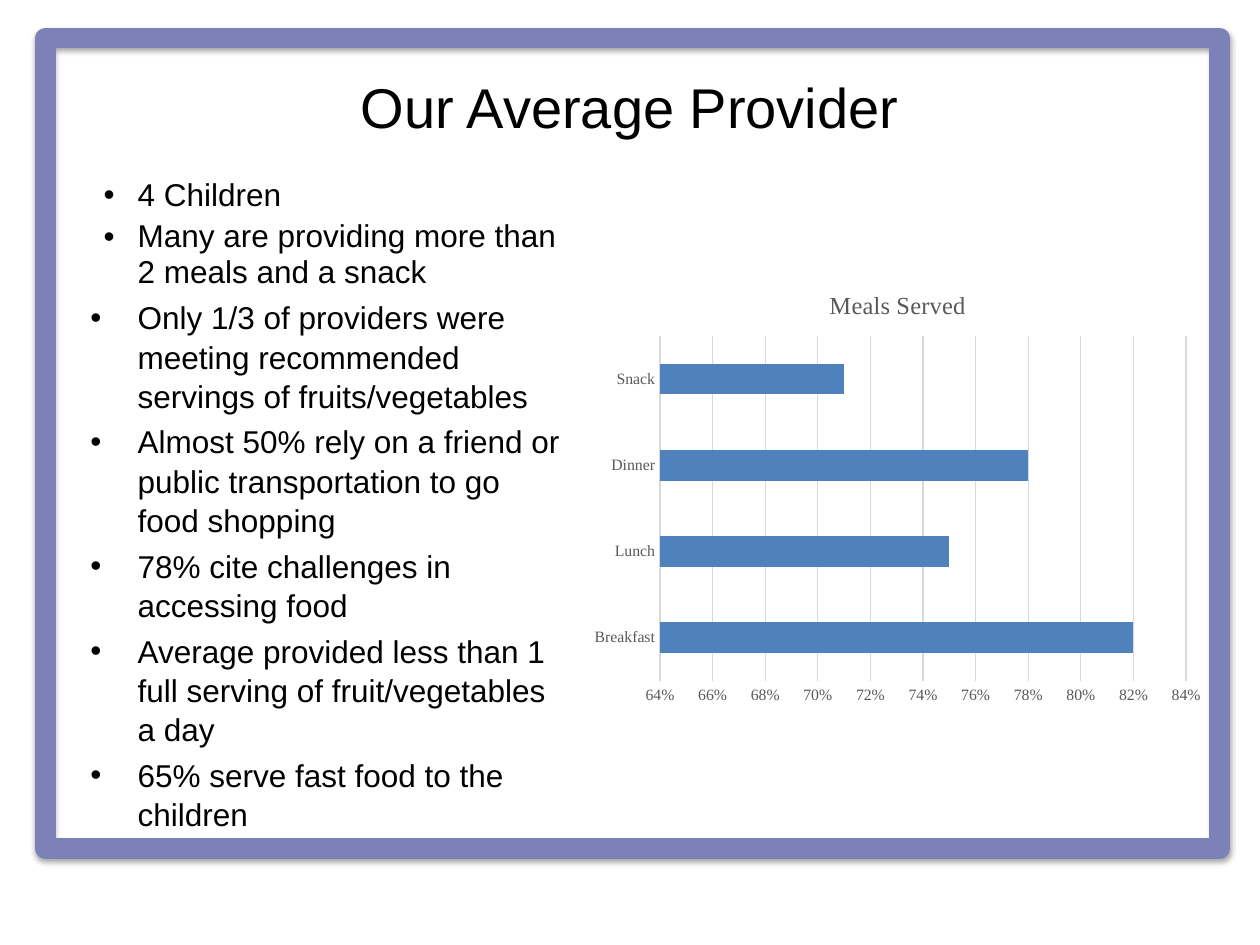
from dataclasses import dataclass

from lxml import etree
from pptx import Presentation
from pptx.chart.data import CategoryChartData
from pptx.dml.color import RGBColor
from pptx.enum.chart import XL_CHART_TYPE, XL_TICK_MARK
from pptx.enum.shapes import MSO_SHAPE
from pptx.enum.text import MSO_ANCHOR, PP_ALIGN
from pptx.oxml.ns import qn
from pptx.util import Pt

BAR_CLUSTERED = XL_CHART_TYPE.BAR_CLUSTERED
NO_TICK = XL_TICK_MARK.NONE
RECTANGLE = MSO_SHAPE.RECTANGLE
MIDDLE = MSO_ANCHOR.MIDDLE
CENTER = PP_ALIGN.CENTER


@dataclass(frozen=True)
class Theme:
    text: RGBColor = RGBColor(0, 0, 0)
    frame: RGBColor = RGBColor(0x7C, 0x81, 0xB8)
    bar: RGBColor = RGBColor(0x4F, 0x81, 0xBD)
    label: RGBColor = RGBColor(0x59, 0x59, 0x59)
    grid: RGBColor = RGBColor(0xD9, 0xD9, 0xD9)
    text_font: str = "Arial"
    chart_font: str = "Times New Roman"
    title_size: float = 32
    body_size: float = 18
    chart_title_size: float = 14
    chart_size: float = 10
    axis_size: float = 9


THEME = Theme()

BULLETS = [
    ("4 Children", 19.5, 0.94),
    ("Many are providing more than 2 meals and a snack", 19.5, 0.94),
    ("Only 1/3 of providers were meeting recommended servings of fruits/vegetables", 27, 1.04),
    ("Almost 50% rely on a friend or public transportation to go food shopping", 27, 1.04),
    ("78% cite challenges in accessing food", 27, 1.04),
    ("Average provided less than 1 full serving of fruit/vegetables a day", 27, 1.04),
    ("65% serve fast food to the children", 27, 1.04),
]
MEALS = {"Breakfast": 0.82, "Lunch": 0.75, "Dinner": 0.78, "Snack": 0.71}


def points(box):
    return [Pt(length) for length in box]


def style_font(font, name, size, color):
    font.name = name
    font.size = Pt(size)
    font.color.rgb = color


def add_frame(slide, box):
    frame = slide.shapes.add_shape(RECTANGLE, *points(box))
    frame.fill.background()
    frame.line.color.rgb = THEME.frame
    frame.line.width = Pt(11.75)
    frame.shadow.inherit = False
    effects = frame.element.spPr.find(qn("a:effectLst"))
    shadow = etree.SubElement(
        effects, qn("a:outerShdw"), blurRad=str(Pt(3.1)), dist=str(Pt(1.8)),
        dir="5400000", rotWithShape="0")
    color = etree.SubElement(shadow, qn("a:srgbClr"), val="000000")
    etree.SubElement(color, qn("a:alpha"), val="35000")


def add_title(slide, box):
    title = slide.shapes.add_textbox(*points(box))
    text_frame = title.text_frame
    text_frame.word_wrap = True
    text_frame.vertical_anchor = MIDDLE
    text_frame.text = "Our Average Provider"
    paragraph = text_frame.paragraphs[0]
    paragraph.alignment = CENTER
    style_font(paragraph.runs[0].font, THEME.text_font, THEME.title_size, THEME.text)


def add_bullets(slide, box):
    body = slide.shapes.add_textbox(*points(box))
    text_frame = body.text_frame
    text_frame.word_wrap = True
    text_frame.text = "\n".join(text for text, _, _ in BULLETS)
    for index, (_, hanging, spacing) in enumerate(BULLETS):
        paragraph = text_frame.paragraphs[index]
        paragraph.line_spacing = spacing
        paragraph.space_before = Pt(3.6 if index else 0)
        properties = paragraph._p.get_or_add_pPr()
        properties.set("marL", str(Pt(27)))
        properties.set("indent", str(-Pt(hanging)))
        etree.SubElement(properties, qn("a:buFont"), typeface=THEME.text_font)
        etree.SubElement(properties, qn("a:buChar"), char="•")
        style_font(paragraph.runs[0].font, THEME.text_font, THEME.body_size, THEME.text)


def add_meals_chart(slide, box):
    data = CategoryChartData(number_format="0%")
    data.categories = list(MEALS)
    data.add_series("Series 1", list(MEALS.values()))
    chart = slide.shapes.add_chart(BAR_CLUSTERED, *points(box), data).chart
    style_font(chart.font, THEME.chart_font, THEME.chart_size, THEME.text)
    chart.has_legend = False

    chart.has_title = True
    title = chart.chart_title
    title.include_in_layout = False
    title.text_frame.text = "Meals Served"
    title_font = title.text_frame.paragraphs[0].runs[0].font
    style_font(title_font, THEME.chart_font, THEME.chart_title_size, THEME.label)
    title_font.bold = False

    for axis in (chart.category_axis, chart.value_axis):
        axis.major_tick_mark = NO_TICK
        axis.minor_tick_mark = NO_TICK
        style_font(axis.tick_labels.font, THEME.chart_font, THEME.axis_size, THEME.label)

    value_axis = chart.value_axis
    value_axis.minimum_scale = 0.64
    value_axis.maximum_scale = 0.84
    value_axis.major_unit = 0.02
    value_axis.tick_labels.number_format = "0%"
    value_axis.tick_labels.number_format_is_linked = False
    value_axis.format.line.fill.background()
    value_axis.has_major_gridlines = True
    for lines in (chart.category_axis, value_axis.major_gridlines):
        lines.format.line.color.rgb = THEME.grid
        lines.format.line.width = Pt(0.75)

    plot = chart.plots[0]
    plot.gap_width = 182
    plot.vary_by_categories = False
    fill = plot.series[0].format.fill
    fill.solid()
    fill.fore_color.rgb = THEME.bar


def main():
    presentation = Presentation()
    presentation.slide_width = Pt(720)
    presentation.slide_height = Pt(540)
    slide = presentation.slides.add_slide(presentation.slide_layouts[6])
    add_frame(slide, (26, 21.8, 671, 463))
    add_title(slide, (36, 36.5, 648, 48))
    add_bullets(slide, (44.6, 98, 286.6, 262))
    add_meals_chart(slide, (332.6, 154, 360.7, 253.4))
    presentation.save("out.pptx")


if __name__ == "__main__":
    main()
